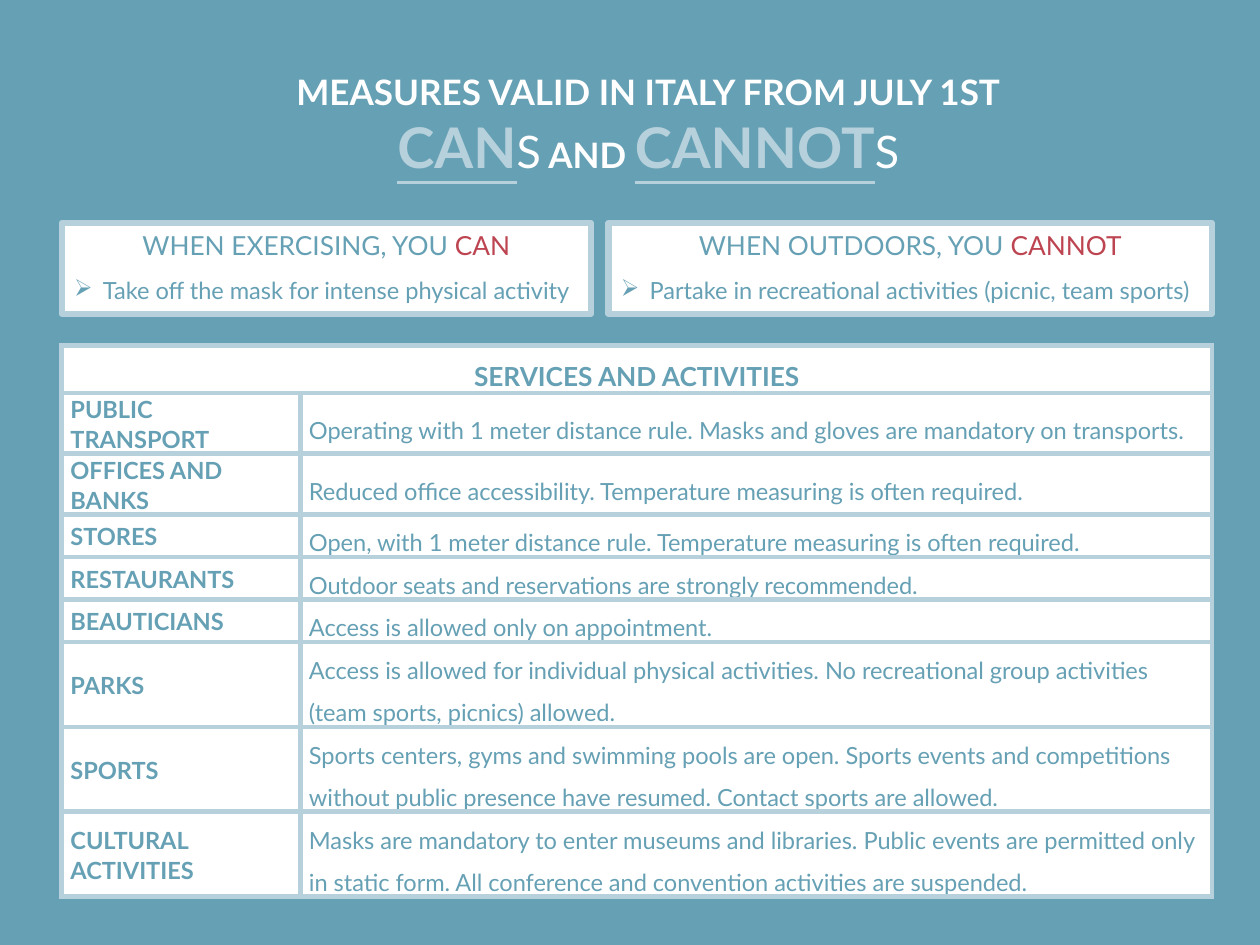
from lxml.etree import SubElement
from pptx import Presentation
from pptx.dml.color import RGBColor
from pptx.enum.shapes import MSO_SHAPE as Shape
from pptx.enum.text import MSO_ANCHOR as Anchor, PP_ALIGN as Align
from pptx.oxml.ns import qn
from pptx.util import Pt

FONT = "Lato"
TEAL, PALE, WHITE, RED = "66A0B4", "B6D1DC", "FFFFFF", "BD4451"
LEFT, WIDTH = 35.3, 657.3
BOX_WIDTHS = (302.4, 344.9)
COLUMN_WIDTHS = (136.3, 521)

SERVICES = [
    ("PUBLIC TRANSPORT", "Operating with 1 meter distance rule. Masks and gloves "
     "are mandatory on transports."),
    ("OFFICES AND BANKS", "Reduced office accessibility. Temperature measuring is "
     "often required."),
    ("STORES", "Open, with 1 meter distance rule. Temperature measuring is often "
     "required."),
    ("RESTAURANTS", "Outdoor seats and reservations are strongly recommended."),
    ("BEAUTICIANS", "Access is allowed only on appointment."),
    ("PARKS", "Access is allowed for individual physical activities. No "
     "recreational group activities (team sports, picnics) allowed."),
    ("SPORTS", "Sports centers, gyms and swimming pools are open. Sports events and "
     "competitions without public presence have resumed. Contact sports are allowed."),
    ("CULTURAL ACTIVITIES", "Masks are mandatory to enter museums and libraries. "
     "Public events are permitted only in static form. All conference and "
     "convention activities are suspended."),
]
ROW_HEIGHTS = [27.4] + [20.2] * 5 + [40.4] * 3


def color(hex_string):
    return RGBColor.from_string(hex_string)


def paint(item, hex_string):
    item.fill.solid()
    item.fill.fore_color.rgb = color(hex_string)


def style(font, size, hex_string, bold=False):
    font.name, font.size, font.bold = FONT, Pt(size), bold
    font.color.rgb = color(hex_string)


def add_span(para, text, size, hex_string, bold=False):
    span = para.add_run()
    span.text = text
    style(span.font, size, hex_string, bold)
    return span


def add_title(page, left, top, width, height):
    box = page.shapes.add_textbox(Pt(left), Pt(top), Pt(width), Pt(height))
    frame = box.text_frame
    frame.word_wrap = True
    first, second = frame.paragraphs[0], frame.add_paragraph()
    first.alignment = second.alignment = Align.CENTER
    first.text = "MEASURES VALID IN ITALY FROM JULY 1ST"
    style(first.font, 20, WHITE, True)
    for word, joiner in (("CAN", " AND "), ("CANNOT", "")):
        add_span(second, word, 32, PALE, True).font.underline = True
        plural = add_span(second, "s", 32, WHITE)
        plural._r.get_or_add_rPr().set("cap", "small")
        if joiner:
            add_span(second, joiner, 20, WHITE, True)


def add_rule_box(page, left, top, width, height, lead, verb, rule):
    """White panel with a heading ending in a red verb, and one bulleted rule."""
    box = page.shapes.add_shape(Shape.RECTANGLE, Pt(left), Pt(top), Pt(width), Pt(height))
    box.shadow.inherit = False
    paint(box, WHITE)
    box.line.color.rgb = color(PALE)
    box.line.width = Pt(3.5)
    frame = box.text_frame
    frame.word_wrap = True
    frame.vertical_anchor = Anchor.TOP

    heading = frame.paragraphs[0]
    heading.alignment = Align.CENTER
    heading.space_after = Pt(4.5)
    add_span(heading, lead, 15, TEAL)
    add_span(heading, verb, 15, RED)

    item = frame.add_paragraph()
    properties = item._p.get_or_add_pPr()
    properties.set("marL", str(Pt(16.5)))
    properties.set("indent", str(-Pt(16.5)))
    SubElement(properties, qn("a:buChar")).set("char", "➢")
    item.text = rule
    item.alignment = Align.JUSTIFY
    item.space_before = Pt(4.5)
    style(item.font, 13.5, TEAL)


def add_borders(cell):
    properties = cell._tc.get_or_add_tcPr()
    for side in ("lnL", "lnR", "lnT", "lnB"):
        line = SubElement(properties, qn(f"a:{side}"), w=str(Pt(3)))
        fill = SubElement(line, qn("a:solidFill"))
        SubElement(fill, qn("a:srgbClr"), val=PALE)


def fill_cell(cell, text, size, bold, spacing, anchor=Anchor.MIDDLE):
    cell.margin_left = cell.margin_right = Pt(5)
    cell.margin_top = cell.margin_bottom = 0
    cell.vertical_anchor = anchor
    para = cell.text_frame.paragraphs[0]
    para.text = text
    para.line_spacing = spacing
    style(para.font, size, TEAL, bold)
    return para


def add_services_table(page, left, top, width):
    frame = page.shapes.add_table(len(ROW_HEIGHTS), 2, Pt(left), Pt(top),
                                  Pt(width), Pt(sum(ROW_HEIGHTS)))
    table = frame.table
    table.first_row = table.horz_banding = False
    for column, column_width in zip(table.columns, COLUMN_WIDTHS):
        column.width = Pt(column_width)
    for row, height in zip(table.rows, ROW_HEIGHTS):
        row.height = Pt(height)
    for cell in table.iter_cells():
        add_borders(cell)
        paint(cell, WHITE)

    header = table.cell(0, 0)
    header.merge(table.cell(0, 1))
    para = fill_cell(header, "SERVICES AND ACTIVITIES", 15, True, 1.5, Anchor.TOP)
    para.alignment = Align.CENTER
    for index, (service, rule) in enumerate(SERVICES, start=1):
        fill_cell(table.cell(index, 0), service, 13.5, True, 1.07)
        fill_cell(table.cell(index, 1), rule, 13.5, False, 1.5)


def main():
    deck = Presentation()
    deck.slide_width, deck.slide_height = Pt(720), Pt(540)
    page = deck.slides.add_slide(deck.slide_layouts[6])
    paint(page.background, TEAL)

    add_title(page, LEFT, 36.7, 670.3, 70.6)
    add_services_table(page, LEFT, 197.3, WIDTH)
    can_width, cannot_width = BOX_WIDTHS
    add_rule_box(page, LEFT, 127.4, can_width, 52, "WHEN EXERCISING, YOU ", "CAN",
                 "Take off the mask for intense physical activity")
    add_rule_box(page, LEFT + WIDTH - cannot_width, 127.4, cannot_width, 52,
                 "WHEN OUTDOORS, YOU ", "CANNOT",
                 "Partake in recreational activities (picnic, team sports)")
    deck.save("out.pptx")


if __name__ == "__main__":
    main()
